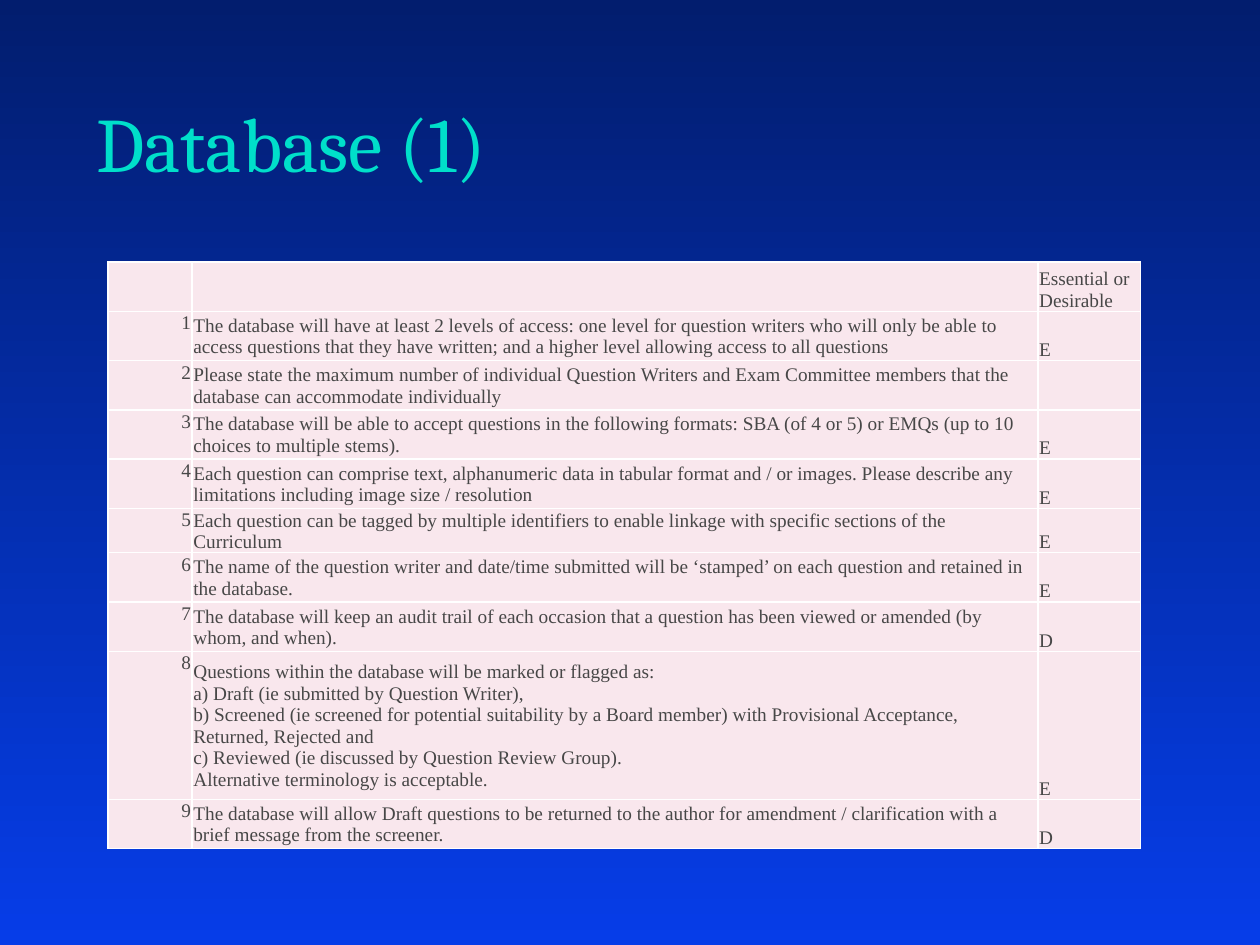
from lxml import etree
from pptx import Presentation
from pptx import util as u
from pptx.dml.color import RGBColor
from pptx.enum import text
from pptx.oxml import ns

NIGHT = RGBColor(0x02, 0x1D, 0x6E)
ROYAL = RGBColor(0x06, 0x3D, 0xE8)
TURQUOISE = RGBColor(0x00, 0xDF, 0xCA)
PINK = RGBColor(0xF9, 0xE7, 0xED)
CHARCOAL = RGBColor(0x47, 0x47, 0x47)
WHITE = RGBColor(0xFF, 0xFF, 0xFF)

REQUIREMENTS = [
    ("The database will have at least 2 levels of access: one level for question writers who will only "
     "be able to access questions that they have written; and a higher level allowing access to all questions", "E"),
    ("Please state the maximum number of individual Question Writers and Exam Committee members that the "
     "database can accommodate individually", ""),
    ("The database will be able to accept questions in the following formats: SBA (of 4 or 5) or EMQs "
     "(up to 10 choices to multiple stems).", "E"),
    ("Each question can comprise text, alphanumeric data in tabular format and / or images. Please describe "
     "any limitations including image size / resolution", "E"),
    ("Each question can be tagged by multiple identifiers to enable linkage with specific sections of the "
     "Curriculum", "E"),
    ("The name of the question writer and date/time submitted will be ‘stamped’ on each question and "
     "retained in the database.", "E"),
    ("The database will keep an audit trail of each occasion that a question has been viewed or amended "
     "(by whom, and when).", "D"),
    ("\v".join([
        "Questions within the database will be marked or flagged as:",
        "a) Draft (ie submitted by Question Writer),",
        "b) Screened (ie screened for potential suitability by a Board member) with Provisional Acceptance, "
        "Returned, Rejected and",
        "c) Reviewed (ie discussed by Question Review Group).",
        "Alternative terminology is acceptable."]), "E"),
    ("The database will allow Draft questions to be returned to the author for amendment / clarification "
     "with a brief message from the screener.", "D"),
]


class RequirementsSlide:
    """Hold the style and the slide, placing elements on a grid of 120 columns by 90 rows."""

    CELL = u.Inches(10) // 120
    COLUMN_STYLES = [
        (text.PP_ALIGN.RIGHT, text.MSO_ANCHOR.TOP),
        (text.PP_ALIGN.LEFT, text.MSO_ANCHOR.MIDDLE),
        (text.PP_ALIGN.LEFT, text.MSO_ANCHOR.BOTTOM),
    ]

    def __init__(self, presentation):
        self.slide = presentation.slides.add_slide(presentation.slide_layouts[5])

    def grid(self, *lengths):
        return [u.Emu(round(length * self.CELL)) for length in lengths]

    def background(self, top, bottom):
        fill = self.slide.background.fill
        fill.gradient()
        fill.gradient_angle = 270
        for stop, color in zip(fill.gradient_stops, (top, bottom)):
            stop.color.rgb = color

    def style(self, paragraph, name, size, color, alignment):
        paragraph.alignment = alignment
        paragraph.font.name = name
        paragraph.font.size = u.Pt(size)
        paragraph.font.color.rgb = color

    def title(self, wording, *place):
        shape = self.slide.shapes.title
        shape.left, shape.top, shape.width, shape.height = self.grid(*place)
        shape.text_frame.text = wording
        shape.text_frame.vertical_anchor = text.MSO_ANCHOR.BOTTOM
        self.style(shape.text_frame.paragraphs[0], "Cambria", 44, TURQUOISE, text.PP_ALIGN.LEFT)

    def borders(self, cell, color, width):
        properties = cell._tc.get_or_add_tcPr()
        for side in ("a:lnL", "a:lnR", "a:lnT", "a:lnB"):
            line = etree.SubElement(properties, ns.qn(side), w=str(u.Pt(width)))
            fill = etree.SubElement(line, ns.qn("a:solidFill"))
            etree.SubElement(fill, ns.qn("a:srgbClr"), val=str(color))

    def cell(self, cell, wording, alignment, anchor):
        self.borders(cell, WHITE, 1)
        cell.fill.solid()
        cell.fill.fore_color.rgb = PINK
        cell.margin_left = cell.margin_right = cell.margin_top = u.Inches(0.01)
        cell.margin_bottom = 0
        cell.vertical_anchor = anchor
        paragraph = cell.text_frame.paragraphs[0]
        paragraph.text = wording
        self.style(paragraph, "Times New Roman", 11, CHARCOAL, alignment)

    def table(self, records, left, top, widths, heights):
        place = self.grid(left, top, sum(widths), sum(heights))
        table = self.slide.shapes.add_table(len(records), len(widths), *place).table
        table.first_row = table.horz_banding = False
        for column, width in zip(table.columns, self.grid(*widths)):
            column.width = width
        for row, height, record in zip(table.rows, self.grid(*heights), records):
            row.height = height
            for cell, wording, (alignment, anchor) in zip(row.cells, record, self.COLUMN_STYLES):
                self.cell(cell, wording, alignment, anchor)


def main():
    presentation = Presentation()
    presentation.slide_width, presentation.slide_height = u.Inches(10), u.Inches(7.5)
    page = RequirementsSlide(presentation)
    page.background(NIGHT, ROYAL)
    page.title("Database (1)", 8, 3.5, 103, 15)
    records = [("", "", "Essential or Desirable")]
    records += [(str(number), *requirement) for number, requirement in enumerate(REQUIREMENTS, 1)]
    heights = [4.7] * 5 + [2.4] + [4.7] * 2 + [14.1, 4.7]
    page.table(records, 10.3, 24.95, [8, 80.55, 9.8], heights)
    presentation.save("out.pptx")


if __name__ == "__main__":
    main()
